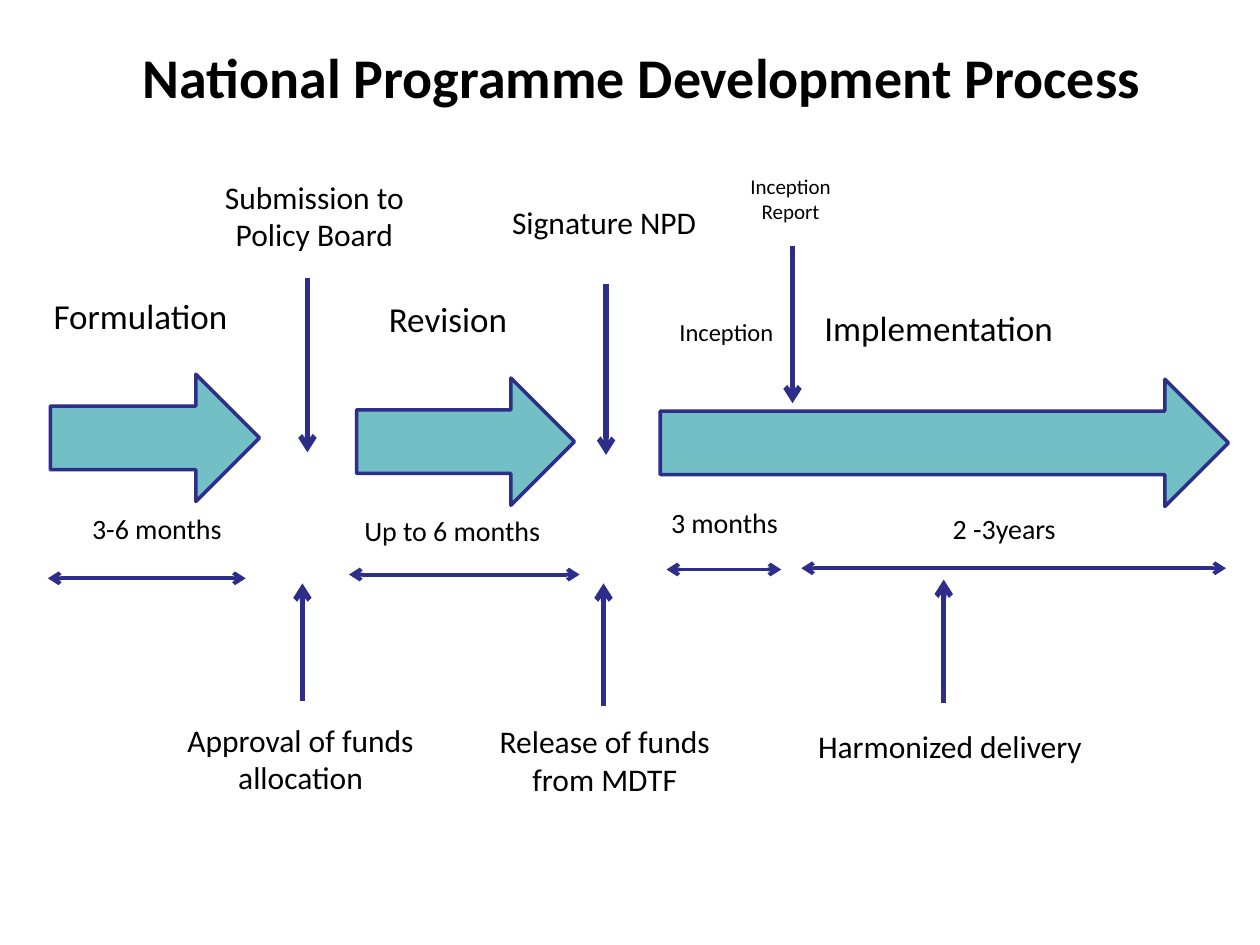
from lxml.etree import SubElement
from pptx import Presentation
from pptx.dml.color import RGBColor
from pptx.enum.shapes import MSO_CONNECTOR, MSO_SHAPE
from pptx.enum.text import MSO_ANCHOR, PP_ALIGN
from pptx.oxml.ns import qn
from pptx.util import Inches, Pt

COLS, ROWS = 100, 75


def tint(code):
    return RGBColor.from_string(code)


class Board:
    """Holds the style and the slide; lengths are columns and rows of a 100 x 75 grid."""
    font, ink, edge, body = "Calibri", "000000", "2D2D8A", "72BFC5"

    def __init__(self, deck):
        self.slide = deck.slides.add_slide(deck.slide_layouts[6])
        self.shapes = self.slide.shapes
        self.col = deck.slide_width / COLS
        self.row = deck.slide_height / ROWS

    def place(self, x, y):
        return round(x * self.col), round(y * self.row)

    def text(self, words, x, y, w, h, size=18, bold=False, anchor=MSO_ANCHOR.TOP):
        box = self.shapes.add_textbox(*self.place(x, y), *self.place(w, h))
        frame = box.text_frame
        frame.word_wrap = True
        frame.vertical_anchor = anchor
        frame.text = words
        for para in frame.paragraphs:
            para.alignment = PP_ALIGN.CENTER
            font = para.font
            font.name, font.size, font.bold = self.font, Pt(size), bold
            font.color.rgb = tint(self.ink)

    def phase(self, x, y, w, h=10.1):
        arrow = self.shapes.add_shape(
            MSO_SHAPE.RIGHT_ARROW, *self.place(x, y), *self.place(w, h))
        arrow.shadow.inherit = False
        arrow.fill.solid()
        arrow.fill.fore_color.rgb = tint(self.body)
        arrow.line.color.rgb = tint(self.edge)
        arrow.line.width = Pt(2)

    def line(self, start, end, width=3, both=False):
        """Draws an arrow to the end point, or a span with heads at both ends."""
        link = self.shapes.add_connector(
            MSO_CONNECTOR.STRAIGHT, *self.place(*start), *self.place(*end))
        link.line.color.rgb = tint(self.edge)
        link.line.width = Pt(width)
        props = link.line._get_or_add_ln()
        for tag in ("a:headEnd", "a:tailEnd") if both else ("a:tailEnd",):
            SubElement(props, qn(tag), type="arrow")
        SubElement(link._element.spPr, qn("a:effectLst"))

    def span(self, left, right, y):
        self.line((left, y), (right, y), width=2.25, both=True)


def main():
    deck = Presentation()
    deck.slide_width, deck.slide_height = Inches(10), Inches(7.5)
    board = Board(deck)
    board.text("National Programme Development Process", 4.8, 1.4, 92.3, 9.3,
               size=32, bold=True, anchor=MSO_ANCHOR.MIDDLE)

    for x, y, w in ((4, 29.7, 16.6), (28.3, 30, 17.3), (52.4, 30.1, 45.1)):
        board.phase(x, y, w)

    for words, x, y, w, size in (
            ("Formulation", 2.5, 22.9, 17.3, 20),
            ("Revision", 26.3, 23.1, 18.5, 20),
            ("Inception", 48.4, 24.7, 18.5, 14),
            ("Implementation", 63.4, 23.8, 22.2, 20)):
        board.text(words, x, y, w, 4.4, size=size)

    for words, x, y, w in (
            ("3-6 months", 3.2, 40.1, 18.5),
            ("Up to 6 months", 27.1, 40.3, 17.6),
            ("3 months", 50.2, 39.6, 14.6),
            ("2 -3years", 72, 40.1, 15.4)):
        board.text(words, x, y, w, 3.7, size=16)

    for left, right, y in ((3.8, 19.5, 45.9), (27.7, 46, 45.6),
                           (52.9, 62, 45.2), (63.6, 97.3, 45.1)):
        board.span(left, right, y)

    for words, x, y, w, h, size in (
            ("Submission to\nPolicy Board", 16.5, 13.6, 16.9, 7.1, 18),
            ("Signature NPD", 37.5, 15.6, 20.9, 4, 18),
            ("Inception Report", 56.4, 13.3, 12.7, 5, 12),
            ("Approval of funds allocation", 12.9, 56.7, 21.9, 7.1, 18),
            ("Release of funds\nfrom MDTF", 35, 56.8, 26, 7.1, 18),
            ("Harmonized delivery", 63, 57.2, 24.8, 4, 18)):
        board.text(words, x, y, w, h, size=size)

    for x, start, end in ((24.4, 22.1, 35.9), (48.1, 22.5, 36.1), (62.9, 19.5, 32),
                          (24, 55.6, 46.3), (47.9, 56, 46.3), (74.9, 55.8, 46)):
        board.line((x, start), (x, end))

    deck.save("out.pptx")


if __name__ == "__main__":
    main()
